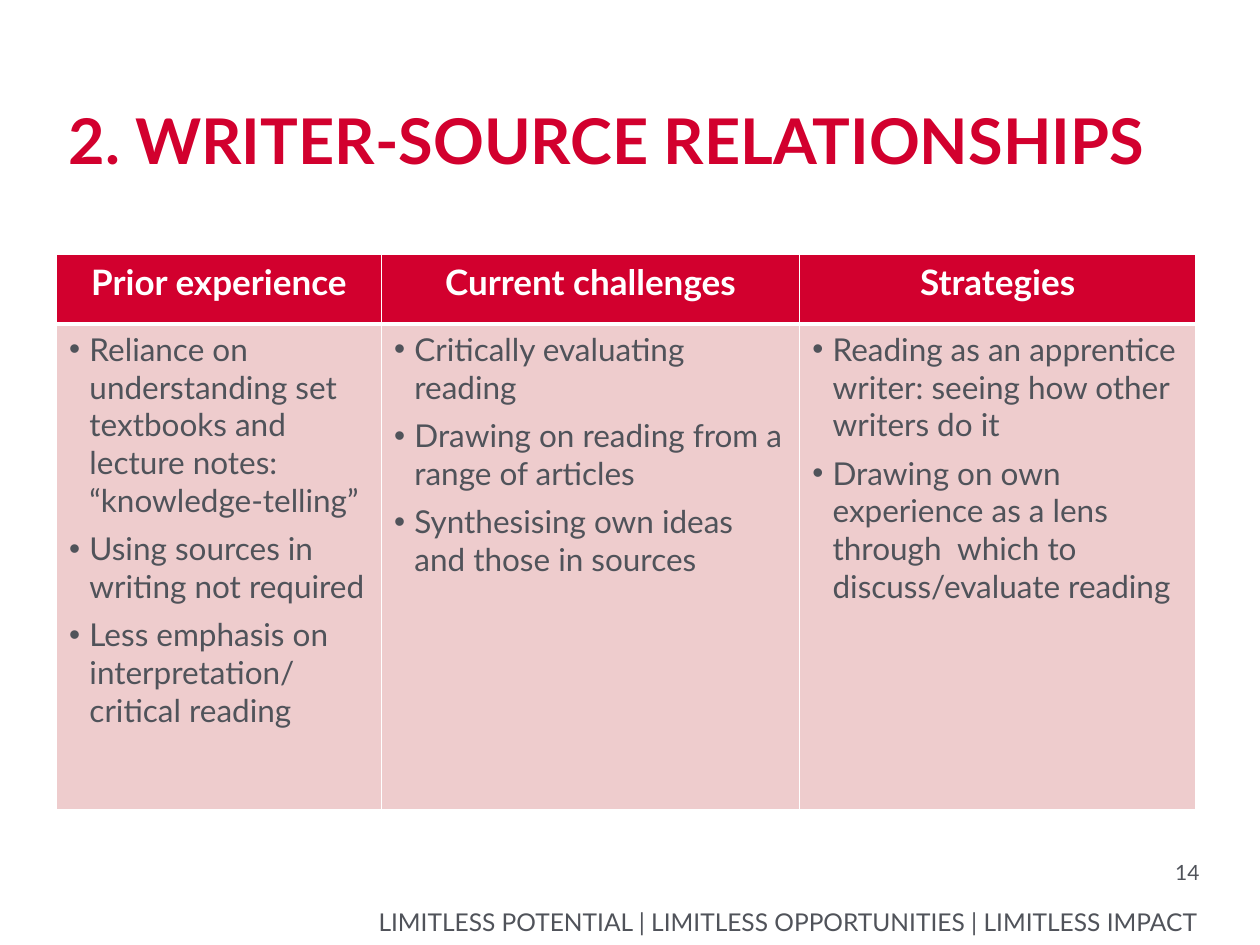
from dataclasses import dataclass

import pptx
import pptx.dml.color
import pptx.enum.text
import pptx.oxml
import pptx.oxml.ns
import pptx.presentation
import pptx.slide
import pptx.table
import pptx.text.text
import pptx.util

RED, PINK, GREY, WHITE = "D2002E", "EECCCD", "50535A", "FFFFFF"
ALIGN = pptx.enum.text.PP_ALIGN
GROW = {"auto_size": pptx.enum.text.MSO_AUTO_SIZE.SHAPE_TO_FIT_TEXT}
FLUSH = dict.fromkeys(("margin_left", "margin_top", "margin_right", "margin_bottom"), 0)
BOTTOM = {"vertical_anchor": pptx.enum.text.MSO_ANCHOR.BOTTOM}
TABLE_LEFT, TABLE_TOP = 1.14, 5.13
ROW_HEIGHTS = (1.4, 9.8)
BULLET_INDENT = pptx.util.Cm(0.41)


@dataclass
class Label:
    """A single-line text box with its place and format."""

    text: str
    place: tuple[float, float, float, float]
    size: int
    frame: dict
    align: ALIGN = ALIGN.RIGHT
    color: str = GREY
    bold: bool = False


@dataclass
class Column:
    """A table column with its heading, width and bullet points."""

    heading: str
    width: float
    points: list[str]


LABELS = [
    Label("LIMITLESS POTENTIAL\u2002|\u2002LIMITLESS OPPORTUNITIES\u2002|\u2002LIMITLESS IMPACT".replace("\u2002", " "),
          (5.36, 18.26, 18.8, 0.61), 14, FLUSH | BOTTOM | GROW),
    Label("14", (22.3, 17.32, 1.88, 0.71), 12, FLUSH),
    Label("2. WRITER-SOURCE RELATIONSHIPS", (1.14, 1.93, 22.96, 1.8), 36, GROW,
          ALIGN.LEFT, RED, True),
]

COLUMNS = [
    Column("Prior experience", 6.55, [
        "Reliance on understanding set textbooks and lecture notes: “knowledge-telling”",
        "Using sources in writing not required",
        "Less emphasis on interpretation/ critical reading",
    ]),
    Column("Current challenges", 8.43, [
        "Critically evaluating reading",
        "Drawing on reading from a range of articles",
        "Synthesising own ideas and those in sources",
    ]),
    Column("Strategies", 7.98, [
        "Reading as an apprentice writer: seeing how other writers do it",
        "Drawing on own experience as a lens through  which to discuss/evaluate reading",
    ]),
]


def rgb(value: str) -> pptx.dml.color.RGBColor:
    """Turn a hex string into a colour."""
    return pptx.dml.color.RGBColor.from_string(value)


def apply(target: object, values: dict) -> None:
    """Set every named attribute on the target."""
    for name, value in values.items():
        setattr(target, name, value)


def write(para: pptx.text.text._Paragraph, text: str, size: int, color: str, bold: bool) -> None:
    """Add one formatted span to a paragraph."""
    span = para.add_run()
    span.text = text
    apply(span.font, {"name": "Lato", "size": pptx.util.Pt(size), "bold": bold})
    span.font.color.rgb = rgb(color)


def draw_label(page: pptx.slide.Slide, label: Label) -> None:
    """Draw a text box on the page."""
    box = page.shapes.add_textbox(*map(pptx.util.Cm, label.place))
    apply(box.text_frame, {"word_wrap": True} | label.frame)
    para = box.text_frame.paragraphs[0]
    para.alignment = label.align
    write(para, label.text, label.size, label.color, label.bold)


def style_cell(cell: pptx.table._Cell, fill: str, widths: dict[str, int]) -> None:
    """Give a cell white borders of the given point widths and a solid fill."""
    properties = cell._tc.get_or_add_tcPr()
    for side, width in widths.items():
        properties.append(pptx.oxml.parse_xml(
            f'<a:{side} {pptx.oxml.ns.nsdecls("a")} w="{pptx.util.Pt(width)}">'
            f'<a:solidFill><a:srgbClr val="{WHITE}"/></a:solidFill></a:{side}>'))
    cell.fill.solid()
    cell.fill.fore_color.rgb = rgb(fill)


def add_bullet(para: pptx.text.text._Paragraph) -> None:
    """Give a paragraph a hanging round bullet."""
    properties = para._p.get_or_add_pPr()
    properties.set("marL", str(BULLET_INDENT))
    properties.set("indent", str(-BULLET_INDENT))
    properties.append(pptx.oxml.parse_xml(
        f'<a:buFont {pptx.oxml.ns.nsdecls("a")} typeface="Arial"/>'))
    properties.append(pptx.oxml.parse_xml(
        f'<a:buChar {pptx.oxml.ns.nsdecls("a")} char="•"/>'))


def draw_table(page: pptx.slide.Slide, columns: list[Column]) -> None:
    """Draw the table of headings and bullet points."""
    place = (TABLE_LEFT, TABLE_TOP, sum(column.width for column in columns), sum(ROW_HEIGHTS))
    table = page.shapes.add_table(
        len(ROW_HEIGHTS), len(columns), *map(pptx.util.Cm, place)).table
    table.horz_banding = False
    for row, height in zip(table.rows, ROW_HEIGHTS):
        row.height = pptx.util.Cm(height)
    for index, column in enumerate(columns):
        table.columns[index].width = pptx.util.Cm(column.width)
        heading, body = table.cell(0, index), table.cell(1, index)
        style_cell(heading, RED, {"lnL": 1, "lnR": 1, "lnT": 1, "lnB": 3})
        style_cell(body, PINK, {"lnL": 1, "lnR": 1, "lnT": 3, "lnB": 1})
        para = heading.text_frame.paragraphs[0]
        para.alignment = ALIGN.CENTER
        write(para, column.heading, 20, WHITE, True)
        for number, point in enumerate(column.points):
            frame = body.text_frame
            para = frame.add_paragraph() if number else frame.paragraphs[0]
            add_bullet(para)
            para.space_after = pptx.util.Pt(6)
            write(para, point, 18, GREY, False)


def main() -> None:
    """Build the slide and save the deck."""
    deck = pptx.Presentation()
    apply(deck, {"slide_width": pptx.util.Cm(25.4), "slide_height": pptx.util.Cm(19.05)})
    page = deck.slides.add_slide(deck.slide_layouts[6])
    for label in LABELS:
        draw_label(page, label)
    draw_table(page, COLUMNS)
    deck.save("out.pptx")


if __name__ == "__main__":
    main()
